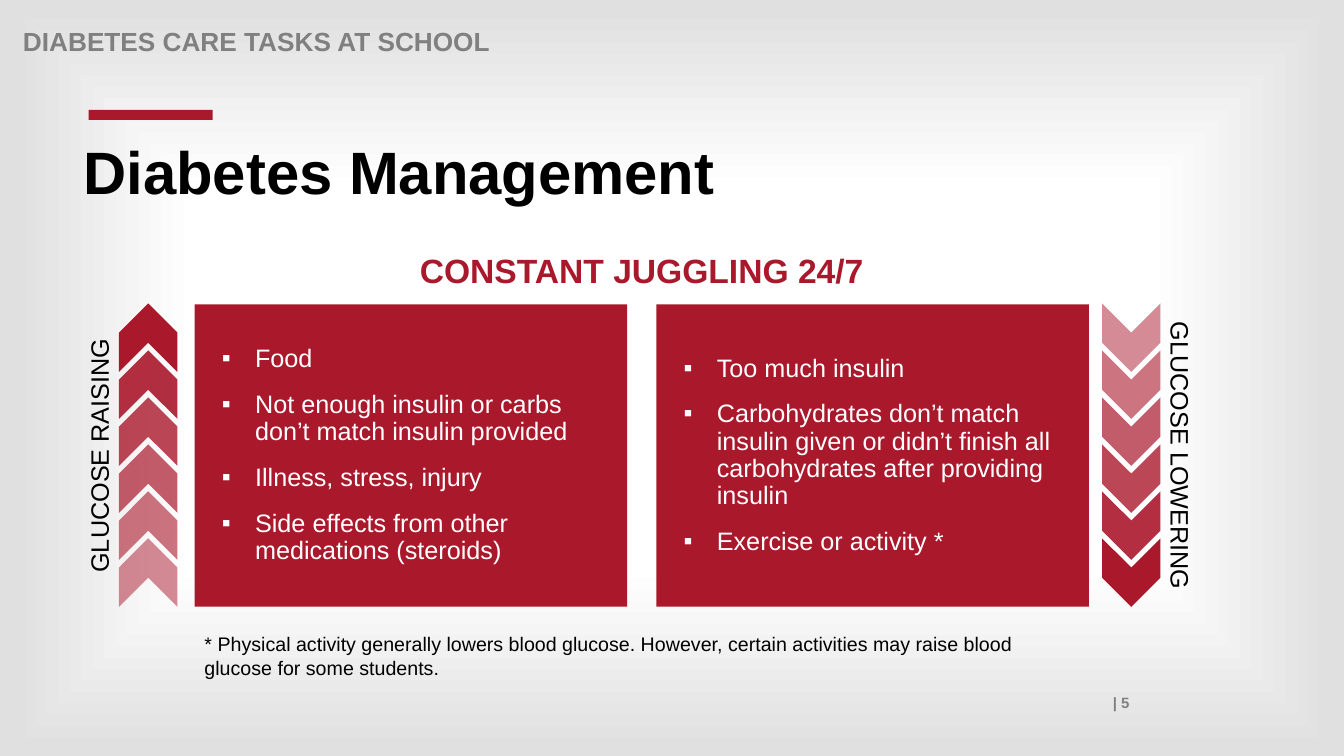
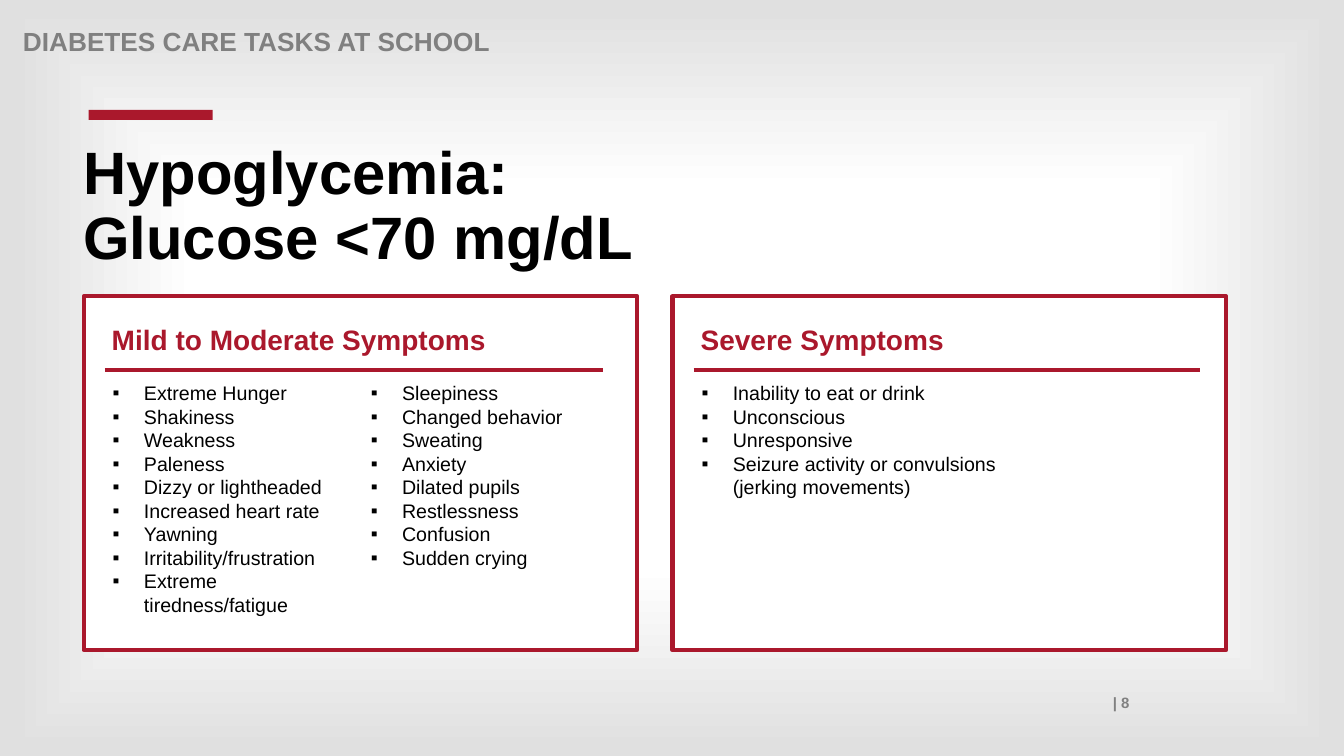
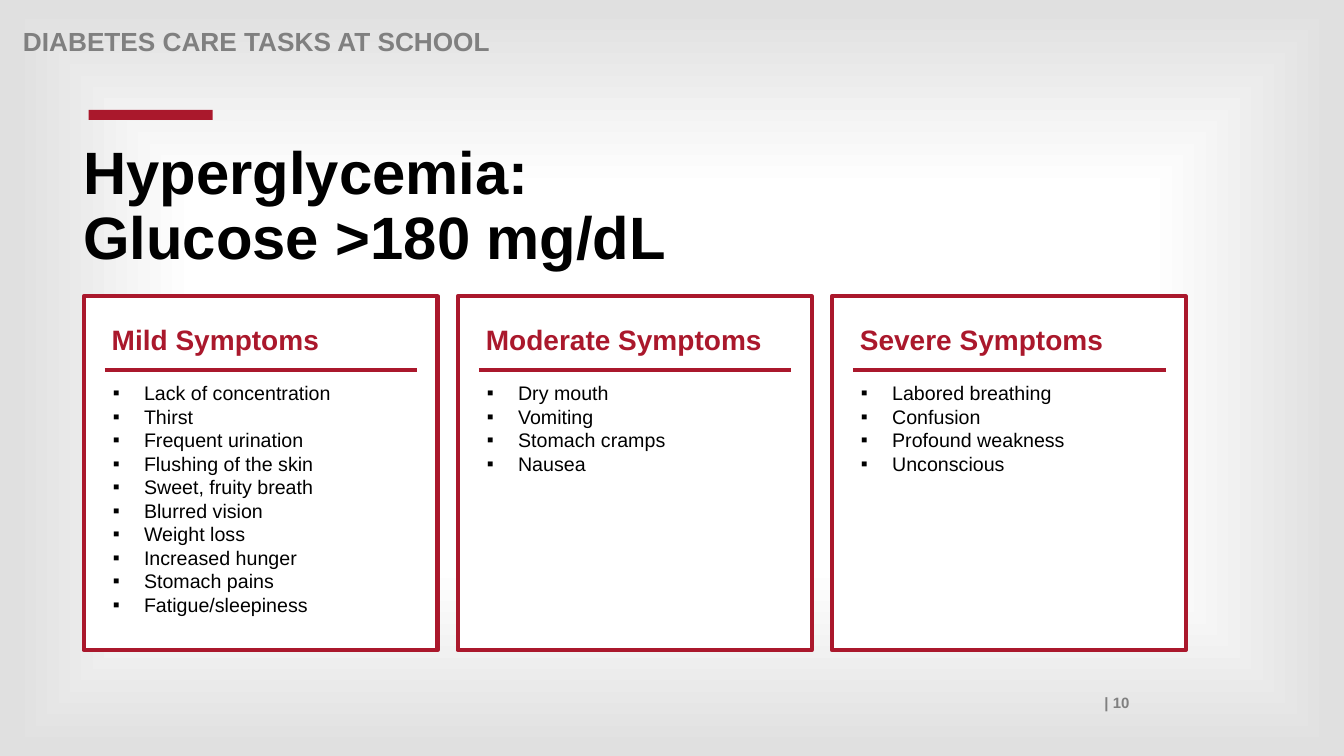
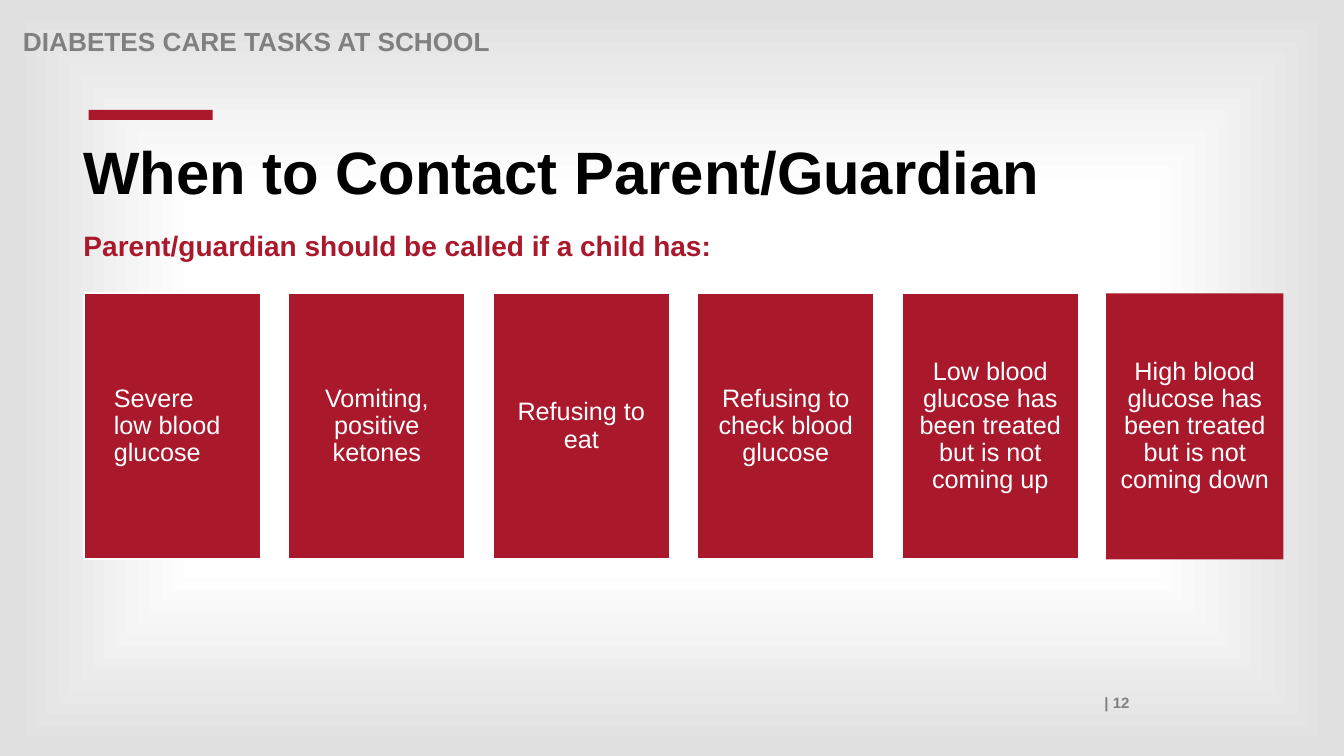
from pptx import Presentation as Deck
from pptx.dml.color import RGBColor as Rgb
from pptx.enum.shapes import MSO_CONNECTOR as Link, MSO_SHAPE as Form
from pptx.enum.text import MSO_ANCHOR as Anchor, PP_ALIGN as Align
from pptx.oxml import parse_xml as to_xml
from pptx.oxml.ns import nsdecls, qn
from pptx.oxml.xmlchemy import OxmlElement as Node
from pptx.util import Inches, Pt

INK = {"red": "AA182C", "gray": "808080", "black": "000000", "white": "FFFFFF", "edge": "E0E0E0"}
FONT = "Arial"
STOPS = [(12, "white"), (50, "white"), (98, "edge")]


def hue(name):
    return Rgb.from_string(INK[name])


def paint(master):
    master.background.fill.gradient()
    old = master.element.find(".//" + qn("a:gradFill"))
    stops = "".join(f'<a:gs pos="{pos}000"><a:srgbClr val="{INK[name]}"/></a:gs>' for pos, name in STOPS)
    new = to_xml(
        f'<a:gradFill {nsdecls("a")} rotWithShape="1"><a:gsLst>{stops}</a:gsLst><a:path path="shape">'
        '<a:fillToRect l="50000" t="50000" r="50000" b="50000"/></a:path></a:gradFill>'
    )
    old.getparent().replace(old, new)


def dot(para, indent):
    props = para._p.get_or_add_pPr()
    props.set("marL", str(Inches(indent)))
    props.set("indent", str(-Inches(indent)))
    for tag, key, val in (("a:buFont", "typeface", FONT), ("a:buChar", "char", "▪")):
        node = Node(tag)
        node.set(key, val)
        props.append(node)


def write(shape, text, size=18, ink="black", bold=False, align=Align.LEFT, anchor=Anchor.TOP,
          pad=(0.1, 0.05), space=None, gap=0, indent=0):
    frame = shape.text_frame
    frame.word_wrap = True
    frame.vertical_anchor = anchor
    frame.margin_left = frame.margin_right = Inches(pad[0])
    frame.margin_top = frame.margin_bottom = Inches(pad[1])
    lines = [text] if isinstance(text, str) else text
    for i, line in enumerate(lines):
        para = frame.add_paragraph() if i else frame.paragraphs[0]
        para.text = line
        if indent:
            dot(para, indent)
        para.alignment = align
        if space:
            para.line_spacing = space
        if i and gap:
            para.space_before = Pt(gap)
        for run in para.runs:
            run.font.name = FONT
            run.font.size = Pt(size)
            run.font.bold = bold
            run.font.color.rgb = hue(ink)


def label(slide, x, y, w, h, text, turn=0, **look):
    box = slide.shapes.add_textbox(Inches(x), Inches(y), Inches(w), Inches(h))
    box.rotation = turn
    write(box, text, **look)


def block(shapes, x, y, w, h, fill="red", line=None, width=3, form=Form.RECTANGLE):
    shape = shapes.add_shape(form, Inches(x), Inches(y), Inches(w), Inches(h))
    shape.shadow.inherit = False
    shape.fill.solid()
    shape.fill.fore_color.rgb = hue(fill)
    if line:
        shape.line.color.rgb = hue(line)
        shape.line.width = Pt(width)
    else:
        shape.line.fill.background()
    return shape


def rule(slide, x, y, w):
    line = slide.shapes.add_connector(Link.STRAIGHT, Inches(x), Inches(y), Inches(x + w), Inches(y))
    line.line.color.rgb = hue("red")
    line.line.width = Pt(3)
    line._element.spPr.append(Node("a:effectLst"))


def arrows(slide, x, turn, fades):
    group = slide.shapes.add_group_shape()
    step = 2.33 / 5
    for i, fade in enumerate(fades):
        shape = block(group.shapes, x, 3.06 + i * step, 0.68, 0.58, form=Form.CHEVRON)
        shape.rotation = turn
        if fade < 100:
            alpha = Node("a:alpha")
            alpha.set("val", f"{fade}000")
            shape._element.spPr.find(".//" + qn("a:srgbClr")).append(alpha)


def card(slide, x, w, reach, head, *lists, wide=3.22):
    block(slide.shapes, x, 2.94, w, 3.51, fill="white", line="red")
    label(slide, x + 0.18, 3.19, w - 0.3, 0.42, head, size=20, ink="red", bold=True, space=0.9)
    rule(slide, x + 0.21, 3.67, reach)
    for i, items in enumerate(lists):
        label(slide, x + 0.19 + i * 2.56, 3.73, wide, 2.4, items, size=14, indent=0.31)


def start(deck, page, title):
    slide = deck.slides.add_slide(deck.slide_layouts[6])
    label(slide, 1.21, 6.83, 10.09, 0.28, f"| {page}", size=10.7, ink="gray", bold=True, align=Align.RIGHT)
    label(slide, 0.13, 0.24, 11, 0.28, "DIABETES CARE TASKS AT SCHOOL", size=18.7, ink="gray", bold=True, space=0.9)
    block(slide.shapes, 0.88, 1.09, 1.23, 0.1)
    label(slide, 0.73, 1.37, 11.03, 1.3 if "\v" in title else 0.85, title, size=42.7, bold=True, space=0.9)
    return slide


def juggle(deck):
    slide = start(deck, 5, "Diabetes Management")
    sides = [
        ["Food", "Not enough insulin or carbs don’t match insulin provided", "Illness, stress, injury",
         "Side effects from other medications (steroids)"],
        ["Too much insulin",
         "Carbohydrates don’t match insulin given or didn’t finish all carbohydrates after providing insulin",
         "Exercise or activity *"],
    ]
    for i, items in enumerate(sides):
        write(block(slide.shapes, 1.93 + i * 4.58, 3.02, 4.29, 3), items, ink="white", anchor=Anchor.MIDDLE,
              pad=(0.27, 0.05), space=0.9, gap=13.3, indent=0.33)
    arrows(slide, 1.13, 270, range(100, 40, -10))
    arrows(slide, 10.88, 90, range(50, 110, 10))
    label(slide, -0.52, 4.32, 3, 0.4, "GLUCOSE RAISING", turn=270, align=Align.CENTER)
    label(slide, 10.21, 4.32, 3, 0.4, "GLUCOSE LOWERING", turn=90, align=Align.CENTER)
    label(slide, 1.93, 2.43, 8.87, 0.5, "CONSTANT JUGGLING 24/7", size=24, ink="red", bold=True, align=Align.CENTER)
    label(slide, 1.93, 6.11, 8.87, 0.68,
          "* Physical activity generally lowers blood glucose. However, certain activities may raise blood "
          "glucose for some students.", size=14, anchor=Anchor.BOTTOM)


def low(deck):
    slide = start(deck, 8, "Hypoglycemia:\vGlucose <70 mg/dL")
    card(slide, 0.83, 5.49, 4.94, "Mild to Moderate Symptoms",
         ["Extreme Hunger", "Shakiness", "Weakness", "Paleness", "Dizzy or lightheaded", "Increased heart rate",
          "Yawning", "Irritability/frustration", "Extreme tiredness/fatigue"],
         ["Sleepiness", "Changed behavior", "Sweating", "Anxiety", "Dilated pupils", "Restlessness",
          "Confusion", "Sudden crying"], wide=2.46)
    card(slide, 6.67, 5.49, 5.02, "Severe Symptoms",
         ["Inability to eat or drink", "Unconscious", "Unresponsive",
          "Seizure activity or convulsions (jerking movements)"])


def high(deck):
    slide = start(deck, 10, "Hyperglycemia:\vGlucose >180 mg/dL")
    cards = [
        ("Mild Symptoms", ["Lack of concentration", "Thirst", "Frequent urination", "Flushing of the skin",
                           "Sweet, fruity breath", "Blurred vision", "Weight loss", "Increased hunger",
                           "Stomach pains", "Fatigue/sleepiness"]),
        ("Moderate Symptoms", ["Dry mouth", "Vomiting", "Stomach cramps", "Nausea"]),
        ("Severe Symptoms", ["Labored breathing", "Confusion", "Profound weakness", "Unconscious"]),
    ]
    for i, (head, items) in enumerate(cards):
        card(slide, 0.83 + i * 3.71, 3.51, 3.1, head, items)


def call(deck):
    slide = start(deck, 12, "When to Contact Parent/Guardian")
    label(slide, 0.73, 2.22, 8.83, 0.51, "Parent/guardian should be called if a child has:",
          size=20, ink="red", bold=True)
    signs = ["Severe low blood glucose", "Vomiting, positive ketones", "Refusing to eat",
             "Refusing to check blood glucose", "Low blood glucose has been treated but is not coming up",
             "High blood glucose has been treated but is not coming down"]
    step = 10.14 / 5
    for i, sign in enumerate(signs):
        line = "white" if i < len(signs) - 1 else None
        shape = block(slide.shapes, 0.83 + i * step, 2.91, 1.76, 2.64, line=line, width=1.5)
        write(shape, sign, ink="white", align=Align.CENTER if i else Align.LEFT, anchor=Anchor.MIDDLE,
              pad=(0.07 if i else 0.3, 0.07), space=0.9)


def main():
    deck = Deck()
    deck.slide_width, deck.slide_height = Inches(13.33), Inches(7.5)
    paint(deck.slide_master)
    for build in (juggle, low, high, call):
        build(deck)
    deck.save("out.pptx")


if __name__ == "__main__":
    main()
